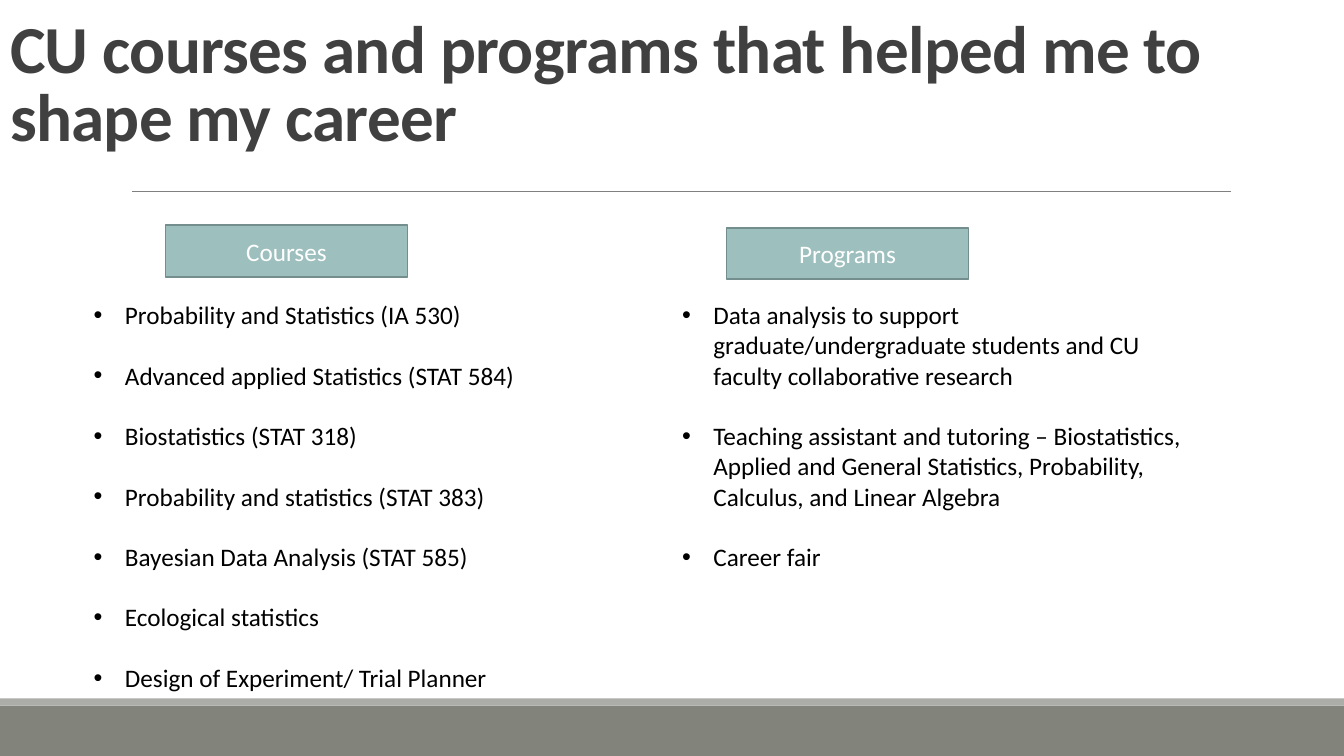
import dataclasses

import lxml.etree
import pptx
import pptx.dml.color
import pptx.enum.shapes
import pptx.enum.text
import pptx.oxml.ns
import pptx.util

Cm = pptx.util.Cm
Pt = pptx.util.Pt
qn = pptx.oxml.ns.qn
RGB = pptx.dml.color.RGBColor.from_string


@dataclasses.dataclass(frozen=True)
class Theme:
    font: str = "Calibri"
    title_size: int = 48
    body_size: int = 18
    title: str = "404040"
    body: str = "000000"
    heading: str = "FFFFFF"
    heading_fill: str = "9DBFBE"
    heading_line: str = "748D8D"
    footer: str = "82847C"
    footer_edge: str = "ACADA8"
    rule: str = "808080"


theme = Theme()


def add_box(left, top, width, height, fill):
    box = slide.shapes.add_shape(
        pptx.enum.shapes.MSO_SHAPE.RECTANGLE, Cm(left), Cm(top), Cm(width), Cm(height))
    box.shadow.inherit = False
    box.fill.solid()
    box.fill.fore_color.rgb = RGB(fill)
    box.line.fill.background()
    return box


def style_paragraph(paragraph, size, color, align):
    paragraph.alignment = align
    paragraph.font.name = theme.font
    paragraph.font.size = Pt(size)
    paragraph.font.color.rgb = RGB(color)


deck = pptx.Presentation()
deck.slide_width = Cm(33.87)
deck.slide_height = Cm(19.05)
slide = deck.slides.add_slide(deck.slide_layouts[5])
align = pptx.enum.text.PP_ALIGN

add_box(0, 17.78, 33.87, 1.27, theme.footer)
add_box(0, 17.6, 33.87, 0.18, theme.footer_edge)

title_rule = slide.shapes.add_connector(
    pptx.enum.shapes.MSO_CONNECTOR.STRAIGHT, Cm(3.33), Cm(4.83), Cm(31.01), Cm(4.83))
title_rule.line.color.rgb = RGB(theme.rule)
title_rule.line.width = Pt(0.5)
lxml.etree.SubElement(title_rule._element.spPr, qn("a:effectLst"))

title = slide.shapes.title
title.left, title.top, title.width, title.height = Cm(0), Cm(0), Cm(33.87), Cm(4.04)
title.text_frame.text = "CU courses and programs that helped me to shape my career"
title.text_frame.word_wrap = True
title.text_frame.auto_size = pptx.enum.text.MSO_AUTO_SIZE.NONE
title.text_frame.vertical_anchor = pptx.enum.text.MSO_ANCHOR.BOTTOM
headline = title.text_frame.paragraphs[0]
style_paragraph(headline, theme.title_size, theme.title, align.LEFT)
headline.font.bold = True
headline.line_spacing = 0.85
headline.runs[0].font._element.set("spc", "-50")

columns = [
    ("Courses", 4.17, 5.68, 2.11, 12.29, 11.02, [
        "Probability and Statistics (IA 530)",
        "Advanced applied Statistics (STAT 584)",
        "Biostatistics (STAT 318)",
        "Probability and statistics (STAT 383)",
        "Bayesian Data Analysis (STAT 585)",
        "Ecological statistics",
        "Design of Experiment/ Trial Planner",
    ]),
    ("Programs", 18.31, 5.74, 16.94, 13.79, 7.19, [
        "Data analysis to support graduate/undergraduate students and CU faculty "
        "collaborative research",
        "Teaching assistant and tutoring – Biostatistics, Applied and General Statistics, "
        "Probability, Calculus, and Linear Algebra",
        "Career fair",
    ]),
]

for name, heading_left, heading_top, list_left, list_width, list_height, items in columns:
    heading = add_box(heading_left, heading_top, 6.1, 1.3, theme.heading_fill)
    heading.line.color.rgb = RGB(theme.heading_line)
    heading.line.width = Pt(1.25)
    heading.text_frame.text = name
    heading.text_frame.vertical_anchor = pptx.enum.text.MSO_ANCHOR.MIDDLE
    style_paragraph(heading.text_frame.paragraphs[0], theme.body_size, theme.heading, align.CENTER)

    entries = slide.shapes.add_textbox(
        Cm(list_left), Cm(7.42), Cm(list_width), Cm(list_height)).text_frame
    entries.word_wrap = True
    entries.text = "\n".join(items)
    for entry in entries.paragraphs:
        style_paragraph(entry, theme.body_size, theme.body, align.LEFT)
        if entry.text != items[-1]:
            entry.space_after = Pt(21.6)
        properties = entry._p.get_or_add_pPr()
        properties.set("marL", str(Cm(0.79)))
        properties.set("indent", str(-Cm(0.79)))
        bullet_font = lxml.etree.Element(qn("a:buFont"), typeface="Arial")
        bullet = lxml.etree.Element(qn("a:buChar"), char="•")
        properties.find(qn("a:defRPr")).addprevious(bullet_font)
        bullet_font.addnext(bullet)

deck.save("out.pptx")
